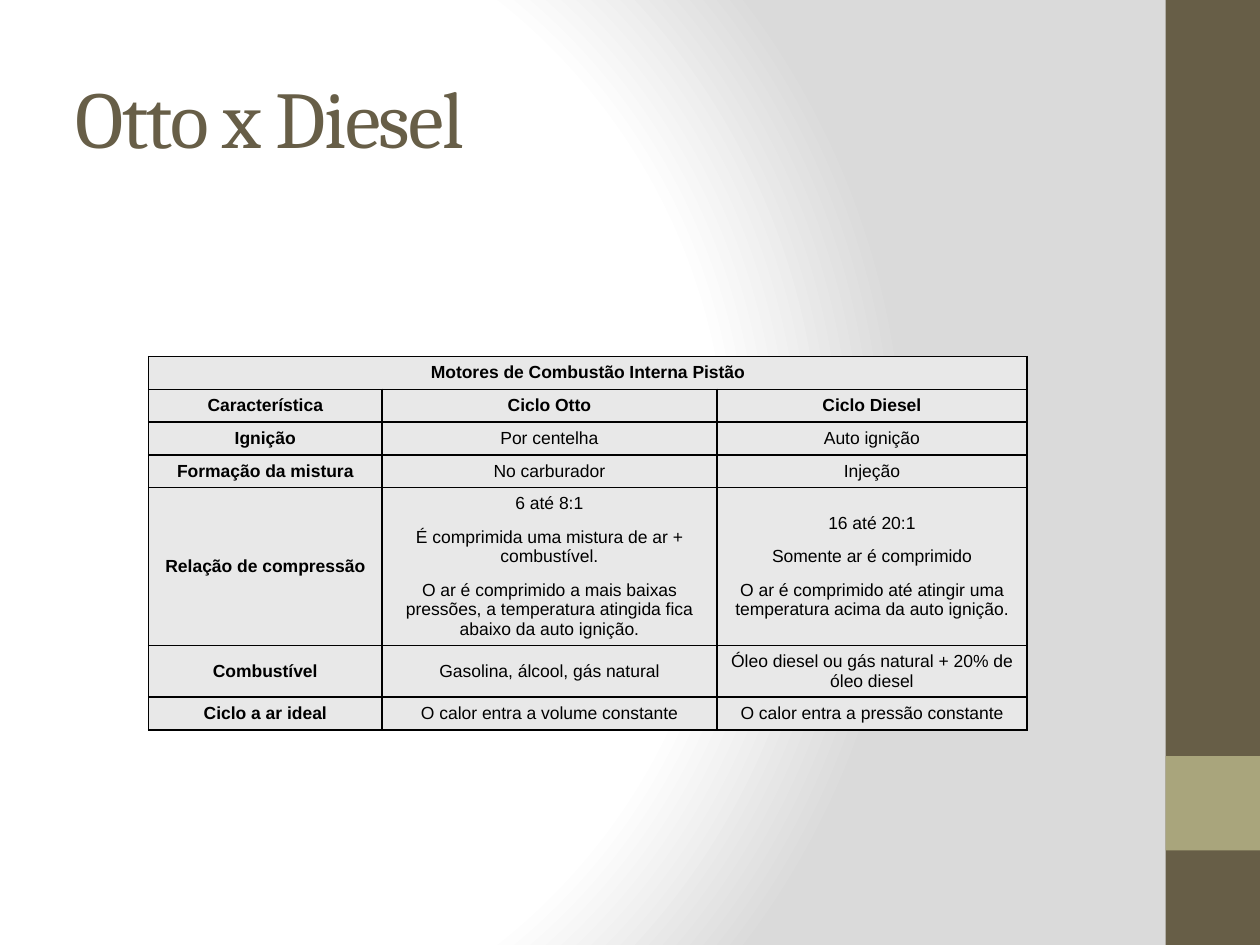
from lxml import etree
from pptx import Presentation
from pptx import util as u
from pptx.dml.color import RGBColor
from pptx.enum import shapes, text
from pptx.oxml import parse_xml
from pptx.oxml.ns import nsdecls, qn

TITLE = "Otto x Diesel"
ROWS = [
    ["Motores de Combustão Interna Pistão"],
    ["Característica", "Ciclo Otto", "Ciclo Diesel"],
    ["Ignição", "Por centelha", "Auto ignição"],
    ["Formação da mistura", "No carburador", "Injeção"],
    [
        "Relação de compressão",
        "6 até 8:1\nÉ comprimida uma mistura de ar + combustível.\n"
        "O ar é comprimido a mais baixas pressões, a temperatura atingida "
        "fica abaixo da auto ignição.",
        "16 até 20:1\nSomente ar é comprimido\n"
        "O ar é comprimido até atingir uma temperatura acima da auto ignição.",
    ],
    ["Combustível", "Gasolina, álcool, gás natural",
     "Óleo diesel ou gás natural + 20% de óleo diesel"],
    ["Ciclo a ar ideal", "O calor entra a volume constante",
     "O calor entra a pressão constante"],
]
HEADER_ROWS = 2
COLUMN_WIDTHS = [1.85, 2.66, 2.46]
LINE_HEIGHT = 0.26
TALL_ROWS = {4: 1.25, 5: 0.41}
TABLE_LEFT, TABLE_TOP = 1.18, 2.83
WIDTH, HEIGHT = 10, 7.5
BAND = 0.75
BROWN, OLIVE, BLACK, GRAY = "675E47", "A9A57C", "000000", "E8E8E8"
STOPS = [(0, "FFFFFF"), (75, "FFFFFF"), (100, "DADADA")]


def color(value):
    return RGBColor.from_string(value)


def place(shape, *lengths):
    shape.left, shape.top, shape.width, shape.height = map(u.Inches, lengths)


def style(paragraph, font, size, shade, bold=False):
    for span in paragraph.runs:
        span.font.name = font
        span.font.size = u.Pt(size)
        span.font.bold = bold
        span.font.color.rgb = color(shade)


def add_background(page):
    stops = "".join(
        f'<a:gs pos="{share * 1000}"><a:srgbClr val="{shade}"/></a:gs>'
        for share, shade in STOPS
    )
    background = parse_xml(
        f'<p:bg {nsdecls("p", "a")}><p:bgPr><a:gradFill rotWithShape="1">'
        f'<a:gsLst>{stops}</a:gsLst><a:path path="circle">'
        '<a:fillToRect l="20000" t="50000" r="100000" b="50000"/></a:path>'
        "</a:gradFill><a:effectLst/></p:bgPr></p:bg>"
    )
    page.element.find(qn("p:cSld")).insert(0, background)


def add_band(page, top, height, shade):
    band = page.shapes.add_shape(shapes.MSO_SHAPE.RECTANGLE, 0, 0, 0, 0)
    place(band, WIDTH - BAND, top, BAND, height)
    band.shadow.inherit = False
    band.fill.solid()
    band.fill.fore_color.rgb = color(shade)
    band.line.fill.background()


def add_title(page):
    title = page.shapes.title
    place(title, 0.5, 0.3, 8.33, 1.25)
    title.text_frame.text = TITLE
    title.text_frame.vertical_anchor = text.MSO_ANCHOR.MIDDLE
    paragraph = title.text_frame.paragraphs[0]
    paragraph.alignment = text.PP_ALIGN.LEFT
    style(paragraph, "Cambria", 46, BROWN)
    for span in paragraph.runs:
        span.font._element.set("spc", "-100")


def add_borders(cell):
    properties = cell._tc.get_or_add_tcPr()
    for index, side in enumerate(["lnL", "lnR", "lnT", "lnB"]):
        border = etree.Element(qn(f"a:{side}"), w=str(u.Pt(1)))
        fill = etree.SubElement(border, qn("a:solidFill"))
        etree.SubElement(fill, qn("a:srgbClr"), val=BLACK)
        properties.insert(index, border)


def fill_cell(cell, content, bold):
    cell.fill.solid()
    cell.fill.fore_color.rgb = color(GRAY)
    add_borders(cell)
    cell.vertical_anchor = text.MSO_ANCHOR.MIDDLE
    cell.margin_left = cell.margin_right = u.Inches(0.07)
    cell.margin_top = cell.margin_bottom = u.Inches(0.05)
    cell.text_frame.text = content
    for paragraph in cell.text_frame.paragraphs:
        paragraph.alignment = text.PP_ALIGN.CENTER
        paragraph.space_after = u.Pt(8)
        style(paragraph, "Arial", 10, BLACK, bold)
        paragraph.font.size = u.Pt(10)


def add_comparison(page):
    heights = [TALL_ROWS.get(row, LINE_HEIGHT) for row in range(len(ROWS))]
    lengths = [TABLE_LEFT, TABLE_TOP, sum(COLUMN_WIDTHS), sum(heights)]
    table = page.shapes.add_table(
        len(ROWS), len(COLUMN_WIDTHS), *map(u.Inches, lengths)
    ).table
    table.first_row = table.horz_banding = False
    for column, width in zip(table.columns, COLUMN_WIDTHS):
        column.width = u.Inches(width)
    for row, height in zip(table.rows, heights):
        row.height = u.Inches(height)
    table.cell(0, 0).merge(table.cell(0, len(COLUMN_WIDTHS) - 1))
    for row in range(len(ROWS)):
        for column in range(len(COLUMN_WIDTHS)):
            content = ROWS[row][column] if column < len(ROWS[row]) else ""
            bold = row < HEADER_ROWS or column == 0
            fill_cell(table.cell(row, column), content, bold)


def main():
    deck = Presentation()
    deck.slide_width, deck.slide_height = u.Inches(WIDTH), u.Inches(HEIGHT)
    page = deck.slides.add_slide(deck.slide_layouts[5])
    add_background(page)
    add_band(page, 0, HEIGHT, BROWN)
    add_band(page, HEIGHT - 2 * BAND, BAND, OLIVE)
    add_title(page)
    add_comparison(page)
    deck.save("out.pptx")


if __name__ == "__main__":
    main()
